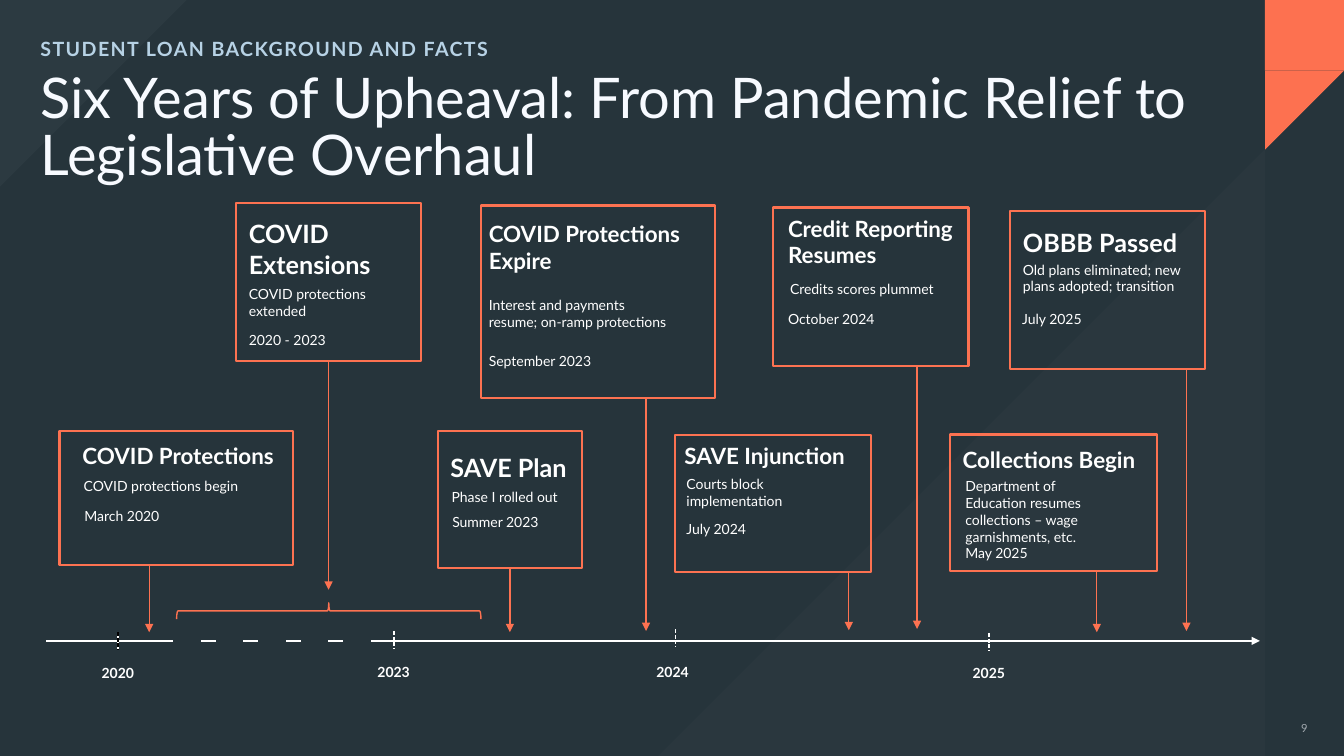
from lxml import etree
from pptx import Presentation
from pptx.dml.color import RGBColor
from pptx.enum.dml import MSO_LINE
from pptx.enum.shapes import MSO_CONNECTOR, MSO_SHAPE
from pptx.enum.text import MSO_ANCHOR, PP_ALIGN
from pptx.oxml.ns import qn
from pptx.util import Cm, Pt

RECTANGLE, TRIANGLE = MSO_SHAPE.RECTANGLE, MSO_SHAPE.ISOSCELES_TRIANGLE
BRACE = MSO_SHAPE.LEFT_BRACE
STRAIGHT = MSO_CONNECTOR.STRAIGHT
DASH = MSO_LINE.SQUARE_DOT
LEFT, CENTER = PP_ALIGN.LEFT, PP_ALIGN.CENTER
TOP, MIDDLE = MSO_ANCHOR.TOP, MSO_ANCHOR.MIDDLE

NIGHT = RGBColor(0x26, 0x34, 0x3B)
ICE = RGBColor(0xF7, 0xFA, 0xFF)
SKY = RGBColor(0xB7, 0xD2, 0xE5)
CORAL = RGBColor(0xFD, 0x71, 0x50)
ORANGE = RGBColor(0xFD, 0x72, 0x51)
WHITE = RGBColor(0xFF, 0xFF, 0xFF)
BLACK = RGBColor(0, 0, 0)

FONT = "Lato"
LINE_PER_PT = 0.0423  # cm of line height for each point of text size

KICKER = "STUDENT LOAN BACKGROUND AND FACTS"
TITLE = "Six Years of Upheaval: From Pandemic Relief to Legislative Overhaul"
PAGE = "9"

# All lengths in cm.
# year, tick x, tick top, label centre, label top
YEARS = [
    ("2020", 2.97, 15.93, 2.97, 16.74),
    ("2023", 9.93, 15.9, 9.92, 16.71),
    ("2024", 17.02, 15.85, 16.95, 16.71),
    ("2025", 24.92, 15.95, 24.92, 16.74),
]
AXIS_Y, AXIS_START, AXIS_END = 16.15, 1.17, 31.75
TICK = 0.46
GAP_START, GAP_STEP, GAP_WIDTH, GAPS = 4.37, 1.07, 0.69, 5

# box (left, top, width, height), arrow (x, tip),
# heading (text, size, left, top, width, lines),
# detail (text, left, top, width, lines), date (text, left, top)
EVENTS = [
    ((1.5, 10.87, 5.89, 3.38), (3.76, 15.93),
     ("COVID Protections", 16, 2.08, 11.15, 5.28, 1),
     ("COVID protections begin", 2.11, 12.04, 4.42, 1),
     ("March 2020", 2.13, 12.8)),
    ((5.94, 5.11, 4.67, 3.99), (8.28, 14.86),
     ("COVID Extensions", 18, 6.27, 5.51, 4.34, 2),
     ("COVID protections extended", 6.27, 7.19, 4.34, 2),
     ("2020 - 2023", 6.27, 8.36)),
    ((11.05, 10.87, 3.61, 3.45), (12.85, 15.93),
     ("SAVE Plan", 18, 11.35, 11.4, 3.07, 1),
     ("Phase I rolled out", 11.38, 12.32, 3.07, 1),
     ("Summer 2023", 11.4, 12.95)),
    ((12.12, 5.18, 5.89, 4.85), (16.28, 15.9),
     ("COVID Protections\nExpire", 16, 12.32, 5.54, 5.49, 2),
     ("Interest and payments resume; on-ramp protections", 12.32, 7.47, 4.57, 2),
     ("September 2023", 12.32, 8.89)),
    ((17.02, 10.97, 4.93, 3.45), (21.39, 15.88),
     ("SAVE Injunction", 16, 17.25, 11.13, 4.22, 1),
     ("Courts block\nimplementation", 17.3, 11.99, 3.56, 2),
     ("July 2024", 17.3, 13.11)),
    ((19.48, 5.23, 4.93, 3.99), (23.11, 15.85),
     ("Credit Reporting\nResumes", 16, 19.86, 5.41, 4.39, 2),
     ("Credits scores plummet", 19.91, 7.06, 3.89, 1),
     ("October 2024", 19.86, 7.82)),
    ((23.95, 10.95, 5.21, 3.45), (27.64, 15.93),
     ("Collections Begin", 16, 24.26, 11.23, 4.5, 1),
     ("Department of Education resumes collections – wage garnishments, etc.",
      24.33, 12.04, 3.63, 4),
     ("May 2025", 24.33, 13.72)),
    ((25.45, 5.31, 4.93, 3.99), (29.9, 15.9),
     ("OBBB Passed", 18, 25.78, 5.72, 4.34, 1),
     ("Old plans eliminated; new plans adopted; transition", 25.78, 6.58, 4.34, 2),
     ("July 2025", 25.76, 7.82)),
]

# shape, left, top, width, height, rotation, colour, opacity in percent
DECOR = [
    (TRIANGLE, 0, 0, 4.7, 4.7, 180, ICE, 3),
    (RECTANGLE, 31.88, 0, 1.99, 1.78, 0, CORAL, 100),
    (TRIANGLE, 31.88, 1.78, 1.99, 1.99, 180, CORAL, 100),
    (TRIANGLE, 16.59, 3.76, 15.29, 15.29, 0, ICE, 2),
]

prs = Presentation()
prs.slide_width, prs.slide_height = Cm(33.87), Cm(19.05)
slide = prs.slides.add_slide(prs.slide_layouts[6])
slide.background.fill.solid()
slide.background.fill.fore_color.rgb = NIGHT


def set_opacity(element, percent):
    for color in element.iter(qn("a:srgbClr")):
        etree.SubElement(color, qn("a:alpha"), val=str(percent * 1000))


def add_shape(kind, left, top, width, height):
    shape = slide.shapes.add_shape(kind, Cm(left), Cm(top), Cm(width), Cm(height))
    shape.shadow.inherit = False
    return shape


def add_outline(kind, box, weight):
    shape = add_shape(kind, *box)
    shape.fill.background()
    shape.line.color.rgb = ORANGE
    shape.line.width = Pt(weight)
    return shape


def add_line(x1, y1, x2, y2, color, weight=1, dash=None, arrow=False):
    line = slide.shapes.add_connector(STRAIGHT, Cm(x1), Cm(y1), Cm(x2), Cm(y2))
    line.line.color.rgb = color
    line.line.width = Pt(weight)
    if dash:
        line.line.dash_style = dash
    properties = line.element.spPr
    if arrow:
        etree.SubElement(properties.find(qn("a:ln")), qn("a:tailEnd"), type="triangle")
    etree.SubElement(properties, qn("a:effectLst"))


def add_text(text, left, top, width, height, size, color=WHITE, bold=False,
             align=LEFT, anchor=TOP):
    box = slide.shapes.add_textbox(Cm(left), Cm(top), Cm(width), Cm(height))
    frame = box.text_frame
    frame.margin_left = frame.margin_right = frame.margin_top = frame.margin_bottom = 0
    frame.word_wrap = True
    frame.vertical_anchor = anchor
    frame.text = text
    for paragraph in frame.paragraphs:
        paragraph.alignment = align
        font = paragraph.font
        font.name, font.size, font.bold = FONT, Pt(size), bold
        font.color.rgb = color
    return box


for kind, left, top, width, height, rotation, color, opacity in DECOR:
    decor = add_shape(kind, left, top, width, height)
    if kind == TRIANGLE:
        decor.adjustments[0] = 1
    decor.rotation = rotation
    decor.fill.solid()
    decor.fill.fore_color.rgb = color
    decor.line.fill.background()
    if opacity < 100:
        set_opacity(decor.element.spPr, opacity)

title = add_text(TITLE, 1.02, 1.68, 30.48, 3.18, 40, ICE, anchor=MIDDLE)
title.text_frame.paragraphs[0].line_spacing = 0.85
kicker = add_text(KICKER, 1.02, 0.91, 30.48, 0.61, 14, SKY, True, anchor=MIDDLE)
for properties in kicker.element.iter(qn("a:defRPr")):
    properties.set("spc", "100")

add_line(AXIS_START, AXIS_Y, AXIS_END, AXIS_Y, WHITE, arrow=True)
for gap in range(GAPS):
    gap_left = GAP_START + gap * GAP_STEP
    add_line(gap_left, AXIS_Y, gap_left + GAP_WIDTH, AXIS_Y, NIGHT, 4.5)

for index, (year, x, top, center, label_top) in enumerate(YEARS):
    if index == 0:
        add_line(x, top, x, top + TICK, WHITE, 1.25)
    add_line(x, top, x, top + TICK, WHITE if index else BLACK, dash=DASH)
    add_text(year, center - 0.79, label_top, 1.58, 0.66, 10, bold=True, align=CENTER)

for box, (arrow_x, tip), heading, detail, (date, date_left, date_top) in EVENTS:
    add_outline(RECTANGLE, box, 1.5)
    add_line(arrow_x, box[1] + box[3], arrow_x, tip, ORANGE, arrow=True)
    name, size, left, top, width, lines = heading
    add_text(name, left, top, width, lines * size * LINE_PER_PT, size, bold=True)
    note, left, top, width, lines = detail
    add_text(note, left, top, width, lines * 10 * LINE_PER_PT, 10)
    add_text(date, date_left, date_top, width, 0.64, 10)

extension_span = add_outline(BRACE, (8.08, 11.56, 0.41, 7.67), 1)
extension_span.rotation = 90

page = add_text(PAGE, 32.61, 18.03, 0.53, 0.64, 8, ICE, align=CENTER, anchor=MIDDLE)
set_opacity(page.element, 60)

prs.save("out.pptx")
